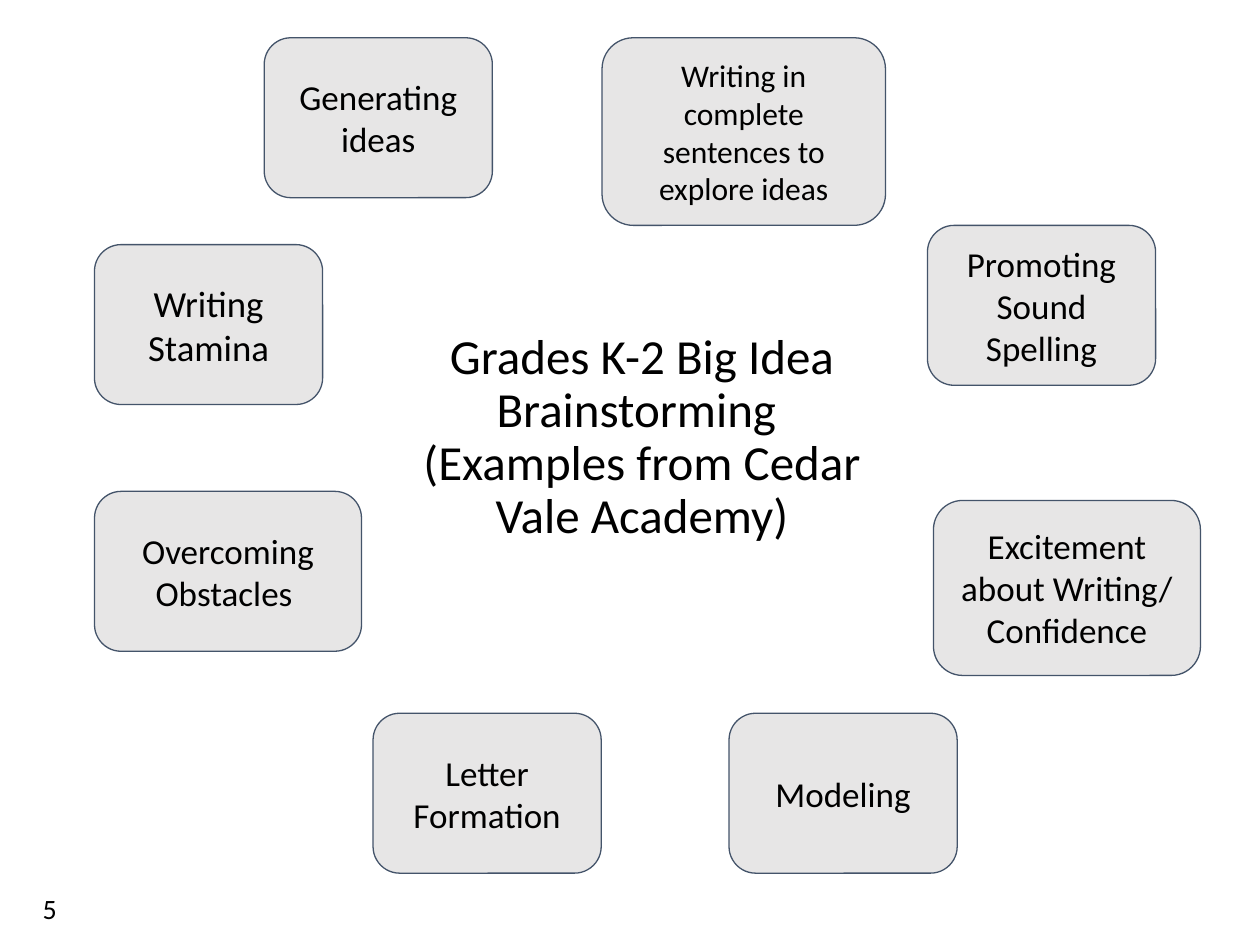
from pptx import Presentation
from pptx.dml.color import RGBColor
from pptx.enum.shapes import MSO_SHAPE
from pptx.enum.text import MSO_ANCHOR, PP_ALIGN
from pptx.util import Pt

ROUNDED = MSO_SHAPE.ROUNDED_RECTANGLE
MIDDLE, TOP = MSO_ANCHOR.MIDDLE, MSO_ANCHOR.TOP
CENTER, LEFT = PP_ALIGN.CENTER, PP_ALIGN.LEFT
COLORS = {"text": "000000", "card": "E7E6E6", "outline": "44546A"}
FONT = "Calibri"
CARD_WIDTH, WIDE_CARD, CARD_HEIGHT = 130.4, 152.6, 91.4
LEFT_EDGE, TOP_ROW, BOTTOM_ROW = 54, 21.6, 407.6

IDEAS = [
    (["Writing Stamina"], LEFT_EDGE, 139.8, CARD_WIDTH, CARD_HEIGHT, 21),
    (["Promoting Sound Spelling"], 530, 128.8, CARD_WIDTH, CARD_HEIGHT, 20),
    (["Overcoming Obstacles "], LEFT_EDGE, 280.8, WIDE_CARD, CARD_HEIGHT, 20),
    (["Letter Formation"], 213.2, BOTTOM_ROW, CARD_WIDTH, CARD_HEIGHT, 20),
    (["Modeling"], 416.6, BOTTOM_ROW, CARD_WIDTH, CARD_HEIGHT, 20),
    (["Generating ideas"], 151, TOP_ROW, CARD_WIDTH, CARD_HEIGHT, 20),
    (["Writing in complete sentences to explore ideas"], 344, TOP_ROW, 162, 107.2, 18),
    (["Excitement about Writing/", "Confidence"], 533.4, 286, WIDE_CARD, 100, 20),
]


class Brainstorm:
    """Draws styled text and idea cards on the current slide."""

    def __init__(self, slide):
        self.slide = slide

    def fill_text(self, frame, lines, size, align, anchor, insets):
        frame.word_wrap = True
        frame.vertical_anchor = anchor
        frame.margin_left = frame.margin_right = Pt(insets[0])
        frame.margin_top = frame.margin_bottom = Pt(insets[1])
        for index, line in enumerate(lines):
            para = frame.add_paragraph() if index else frame.paragraphs[0]
            para.alignment = align
            for part_index, part in enumerate(line.split("\n")):
                if part_index:
                    para.add_line_break()
                span = para.add_run()
                span.text = part
                span.font.name = FONT
                span.font.size = Pt(size)
                span.font.color.rgb = RGBColor.from_string(COLORS["text"])

    def text(self, line, left, top, width, height, size, align=LEFT, insets=(7.2, 3.6)):
        box = self.slide.shapes.add_textbox(Pt(left), Pt(top), Pt(width), Pt(height))
        self.fill_text(box.text_frame, [line], size, align, TOP, insets)
        return box

    def card(self, lines, left, top, width, height, size):
        box = self.slide.shapes.add_shape(ROUNDED, Pt(left), Pt(top), Pt(width), Pt(height))
        box.shadow.inherit = False
        box.fill.solid()
        box.fill.fore_color.rgb = RGBColor.from_string(COLORS["card"])
        box.line.color.rgb = RGBColor.from_string(COLORS["outline"])
        box.line.width = Pt(0.75)
        self.fill_text(box.text_frame, lines, size, CENTER, MIDDLE, (7.2, 7.2))


def main():
    deck = Presentation()
    deck.slide_width, deck.slide_height = Pt(720), Pt(540)
    page = Brainstorm(deck.slides.add_slide(deck.slide_layouts[6]))
    title = page.text(
        "Grades K-2 Big Idea Brainstorming \n(Examples from Cedar Vale Academy)",
        223.2, 190, 287.2, 146.2, 28, CENTER, (0, 0),
    )
    title.text_frame.paragraphs[0].line_spacing = 0.9
    page.text("5", 17.2, 506.2, 162, 28.8, 16)
    for idea in IDEAS:
        page.card(*idea)
    deck.save("out.pptx")


if __name__ == "__main__":
    main()
